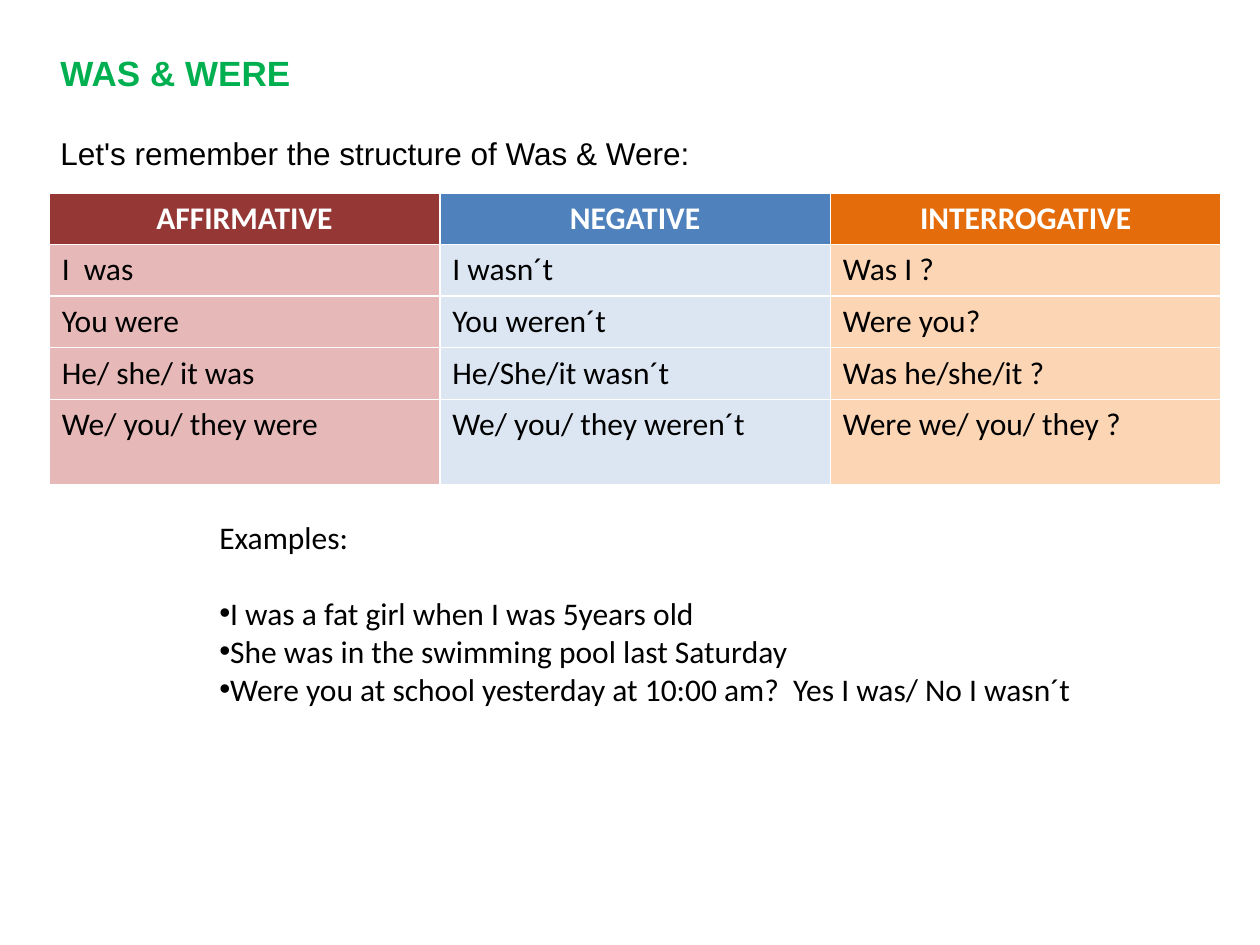
"""Build the WAS & WERE grammar slide."""
from dataclasses import dataclass

import pptx
import pptx.dml.color
import pptx.enum.text
import pptx.oxml
import pptx.oxml.ns
import pptx.util
from pptx.util import Inches

ALIGN = pptx.enum.text.PP_ALIGN


@dataclass(frozen=True)
class Theme:
    """Colours, fonts and type sizes of the slide."""
    heading: str = "00B050"
    ink: str = "000000"
    white: str = "FFFFFF"
    heading_font: str = "Arial"
    body_font: str = "Calibri"
    heading_size: int = 20
    text_size: int = 18


@dataclass(frozen=True)
class Box:
    """Position and size in inches."""
    left: float
    top: float
    width: float
    height: float


@dataclass(frozen=True)
class Form:
    """One table column: a verb form, its colours and its sentences."""
    name: str
    dark: str
    light: str
    sentences: tuple[str, ...]


THEME = Theme()
TITLE_BOX = Box(0.38, 0.36, 5.24, 1.51)
TABLE_BOX = Box(0.39, 1.53, 9.3, 2.32)
EXAMPLES_BOX = Box(1.64, 4.06, 7.04, 1.62)
ROW_HEIGHT = 0.41
FORMS = (
    Form("AFFIRMATIVE", "953735", "E6B9B8",
         ("I  was", "You were", "He/ she/ it was", "We/ you/ they were")),
    Form("NEGATIVE", "4F81BD", "DCE6F2",
         ("I wasn´t", "You weren´t", "He/She/it wasn´t", "We/ you/ they weren´t")),
    Form("INTERROGATIVE", "E46C0A", "FCD5B5",
         ("Was I ?", "Were you?", "Was he/she/it ?", "Were we/ you/ they ?")),
)
EXAMPLES = (
    "I was a fat girl when I was 5years old",
    "She was in the swimming pool last Saturday",
    "Were you at school yesterday at 10:00 am?  Yes I was/ No I wasn´t",
)


def rgb(value: str) -> pptx.dml.color.RGBColor:
    """Turn a hex string into a colour."""
    return pptx.dml.color.RGBColor.from_string(value)


def add_run(p, text: str, font: str, size: int, color: str, bold: bool = False) -> None:
    """Add one formatted run to a paragraph."""
    r = p.add_run()
    r.text = text
    r.font.name = font
    r.font.size = pptx.util.Pt(size)
    r.font.bold = bold
    r.font.color.rgb = rgb(color)


def place(sp, box: Box):
    """Move a placeholder and return its top-anchored text frame."""
    sp.left, sp.top = Inches(box.left), Inches(box.top)
    sp.width, sp.height = Inches(box.width), Inches(box.height)
    tf = sp.text_frame
    tf.word_wrap = False
    tf.auto_size = pptx.enum.text.MSO_AUTO_SIZE.NONE
    tf.vertical_anchor = pptx.enum.text.MSO_ANCHOR.TOP
    return tf


def add_line(tf, first: bool, gap: int = 0):
    """Return a left-aligned paragraph with the given space before it."""
    p = tf.paragraphs[0] if first else tf.add_paragraph()
    p.alignment = ALIGN.LEFT
    p.space_before = pptx.util.Pt(gap)
    return p


def fill_title(sp) -> None:
    """Write the heading and its introduction."""
    tf = place(sp, TITLE_BOX)
    add_run(add_line(tf, True), "WAS & WERE", THEME.heading_font,
            THEME.heading_size, THEME.heading, True)
    add_run(add_line(tf, False, 23), "Let's remember the structure of Was & Were:",
            THEME.heading_font, THEME.text_size, THEME.ink)


def fill_cell(cell, text: str, fill: str, header: bool) -> None:
    """Colour a table cell and write its text."""
    cell.fill.solid()
    cell.fill.fore_color.rgb = rgb(fill)
    p = cell.text_frame.paragraphs[0]
    p.alignment = ALIGN.CENTER if header else ALIGN.LEFT
    add_run(p, text, THEME.body_font, THEME.text_size,
            THEME.white if header else THEME.ink, header)


def add_forms_table(s) -> None:
    """Draw the table of verb forms."""
    rows = len(FORMS[0].sentences) + 1
    box = TABLE_BOX
    table = s.shapes.add_table(rows, len(FORMS), Inches(box.left), Inches(box.top),
                               Inches(box.width), Inches(box.height)).table
    table.horz_banding = False
    for row in table.rows:
        row.height = Inches(ROW_HEIGHT)
    table.rows[rows - 1].height = Inches(box.height - ROW_HEIGHT * (rows - 1))
    for col, form in enumerate(FORMS):
        fill_cell(table.cell(0, col), form.name, form.dark, True)
        for row, sentence in enumerate(form.sentences, 1):
            fill_cell(table.cell(row, col), sentence, form.light, False)


def set_bullet(p, char: str = "") -> None:
    """Set a bullet without indent, or none."""
    pPr = p._p.get_or_add_pPr()
    pPr.set("marL", "0")
    pPr.set("indent", "0")
    tag = "a:buChar" if char else "a:buNone"
    bullet = pptx.oxml.parse_xml(f"<{tag} {pptx.oxml.ns.nsdecls('a')}/>")
    if char:
        bullet.set("char", char)
    pPr.append(bullet)


def fill_examples(sp) -> None:
    """Write the bulleted examples."""
    tf = place(sp, EXAMPLES_BOX)
    for i, text in enumerate(("Examples:", *EXAMPLES)):
        p = add_line(tf, i == 0, 22 if i == 1 else 0)
        set_bullet(p, "•" if i else "")
        add_run(p, text, THEME.body_font, THEME.text_size, THEME.ink)


def main() -> None:
    """Build and save the presentation."""
    prs = pptx.Presentation()
    prs.slide_width, prs.slide_height = Inches(10), Inches(7.5)
    s = prs.slides.add_slide(prs.slide_layouts[1])
    fill_title(s.shapes.title)
    add_forms_table(s)
    fill_examples(s.placeholders[1])
    prs.save("out.pptx")


if __name__ == "__main__":
    main()
